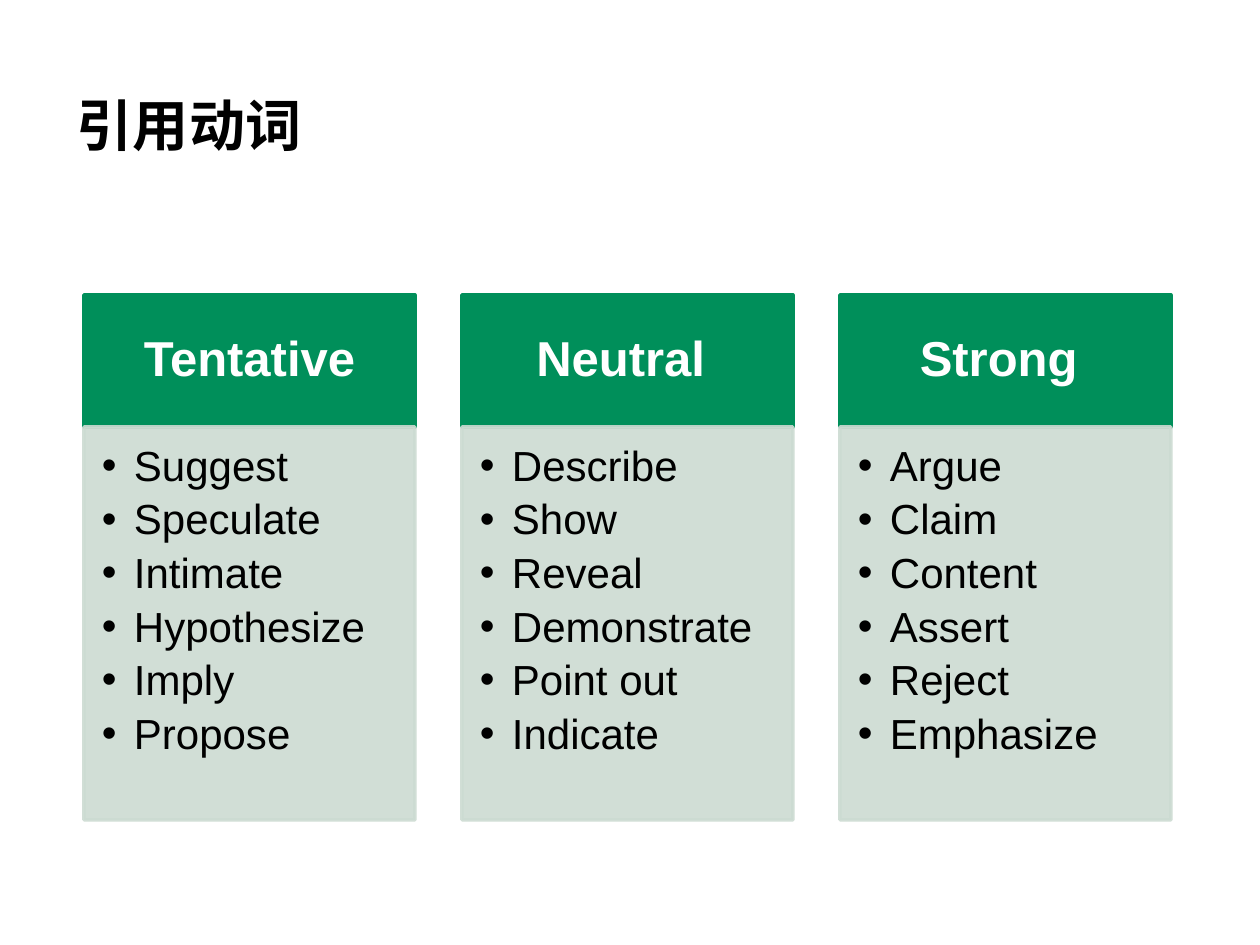
from dataclasses import dataclass

from lxml.etree import SubElement
from pptx import Presentation
from pptx.dml.color import RGBColor
from pptx.enum.shapes import MSO_SHAPE
from pptx.enum.text import MSO_ANCHOR, PP_ALIGN
from pptx.oxml.ns import qn
from pptx.util import Pt

PX = 914400 // 126


@dataclass(frozen=True)
class Theme:
    header: RGBColor = RGBColor.from_string("008F5A")
    panel: RGBColor = RGBColor.from_string("CCDBD2")
    ink: RGBColor = RGBColor.from_string("000000")
    reverse: RGBColor = RGBColor.from_string("FFFFFF")
    latin: str = "Arial"
    chinese: str = "Noto Sans CJK SC"
    title_size: int = 32
    header_size: int = 28
    verb_size: int = 24
    outline: int = 2


THEME = Theme()

VERBS = {
    "Tentative": ["Suggest", "Speculate", "Intimate", "Hypothesize", "Imply", "Propose"],
    "Neutral ": ["Describe", "Show", "Reveal", "Demonstrate", "Point out", "Indicate"],
    "Strong ": ["Argue", "Claim", "Content", "Assert", "Reject", "Emphasize"],
}


def add_bullet(paragraph, indent):
    properties = paragraph._p.get_or_add_pPr()
    properties.set("marL", str(indent * PX))
    properties.set("indent", str(-indent * PX))
    SubElement(properties, qn("a:buFont"), typeface=THEME.latin)
    SubElement(properties, qn("a:buChar"), char="•")


def write_text(frame, lines, *, size, color, font=THEME.latin, bold=False,
               align=PP_ALIGN.LEFT, anchor=MSO_ANCHOR.TOP, insets=(0, 0, 0, 0),
               spacing=1.0, after=0, indent=0):
    frame.word_wrap = True
    frame.vertical_anchor = anchor
    (frame.margin_left, frame.margin_top,
     frame.margin_right, frame.margin_bottom) = (inset * PX for inset in insets)
    for index, line in enumerate(lines):
        paragraph = frame.add_paragraph() if index else frame.paragraphs[0]
        paragraph.alignment = align
        paragraph.line_spacing = spacing
        paragraph.space_after = Pt(after)
        if indent:
            add_bullet(paragraph, indent)
        run = paragraph.add_run()
        run.text = line
        run.font.size = Pt(size)
        run.font.bold = bold
        run.font.name = font
        run.font.color.rgb = color
        SubElement(run._r.get_or_add_rPr(), qn("a:ea"), typeface=font)


def add_block(slide, left, top, width, height, color, opacity=100):
    block = slide.shapes.add_shape(
        MSO_SHAPE.RECTANGLE, left * PX, top * PX, width * PX, height * PX)
    block.shadow.inherit = False
    block.fill.solid()
    block.fill.fore_color.rgb = color
    block.line.color.rgb = color
    block.line.width = Pt(THEME.outline)
    if opacity < 100:
        for tint in block._element.spPr.iter(qn("a:srgbClr")):
            SubElement(tint, qn("a:alpha"), val=str(opacity * 1000))
    return block.text_frame


def add_title(slide, left, top, width, height):
    title = slide.shapes.add_textbox(left * PX, top * PX, width * PX, height * PX)
    write_text(title.text_frame, ["引用动词"], size=THEME.title_size, color=THEME.ink,
               font=THEME.chinese, bold=True, anchor=MSO_ANCHOR.BOTTOM)


def add_verb_column(slide, left, top, width, height, heading, verbs):
    header_height = 132
    header = add_block(slide, left, top, width, header_height, THEME.header)
    write_text(header, [heading], size=THEME.header_size, color=THEME.reverse, bold=True,
               align=PP_ALIGN.CENTER, anchor=MSO_ANCHOR.MIDDLE,
               insets=(28, 15, 28, 15), spacing=0.9)
    panel = add_block(slide, left, top + header_height, width, height - header_height,
                      THEME.panel, opacity=90)
    write_text(panel, verbs, size=THEME.verb_size, color=THEME.ink,
               insets=(18, 18, 24, 26), spacing=0.9, after=4.7, indent=32)


def add_verb_columns(slide, left, top, width, height):
    gap = 47
    column_width = (width - gap * (len(VERBS) - 1)) // len(VERBS)
    for index, (heading, verbs) in enumerate(VERBS.items()):
        add_verb_column(slide, left + index * (column_width + gap), top,
                        column_width, height, heading, verbs)


def main():
    deck = Presentation()
    deck.slide_width, deck.slide_height = 1260 * PX, 945 * PX
    slide = deck.slides.add_slide(deck.slide_layouts[6])
    add_title(slide, 77, 23, 1017, 135)
    add_verb_columns(slide, 84, 295, 1087, 525)
    deck.save("out.pptx")


if __name__ == "__main__":
    main()
